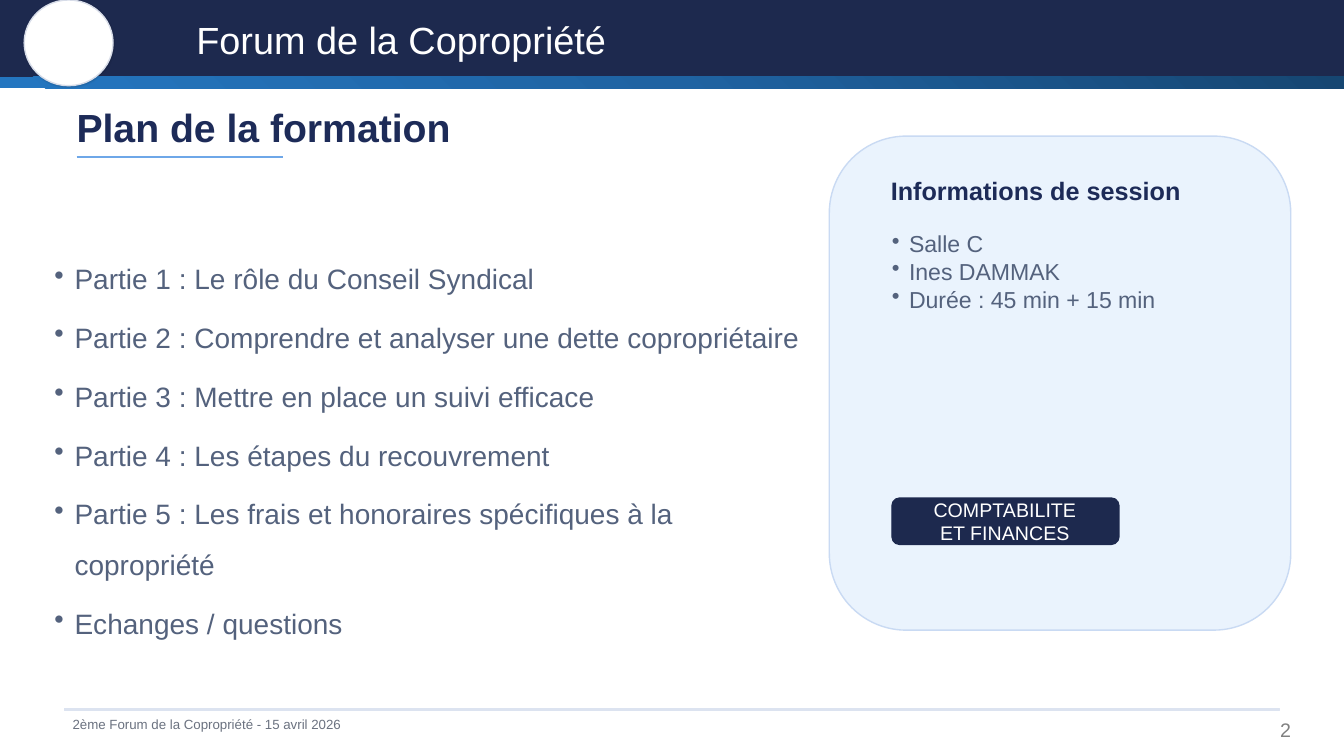
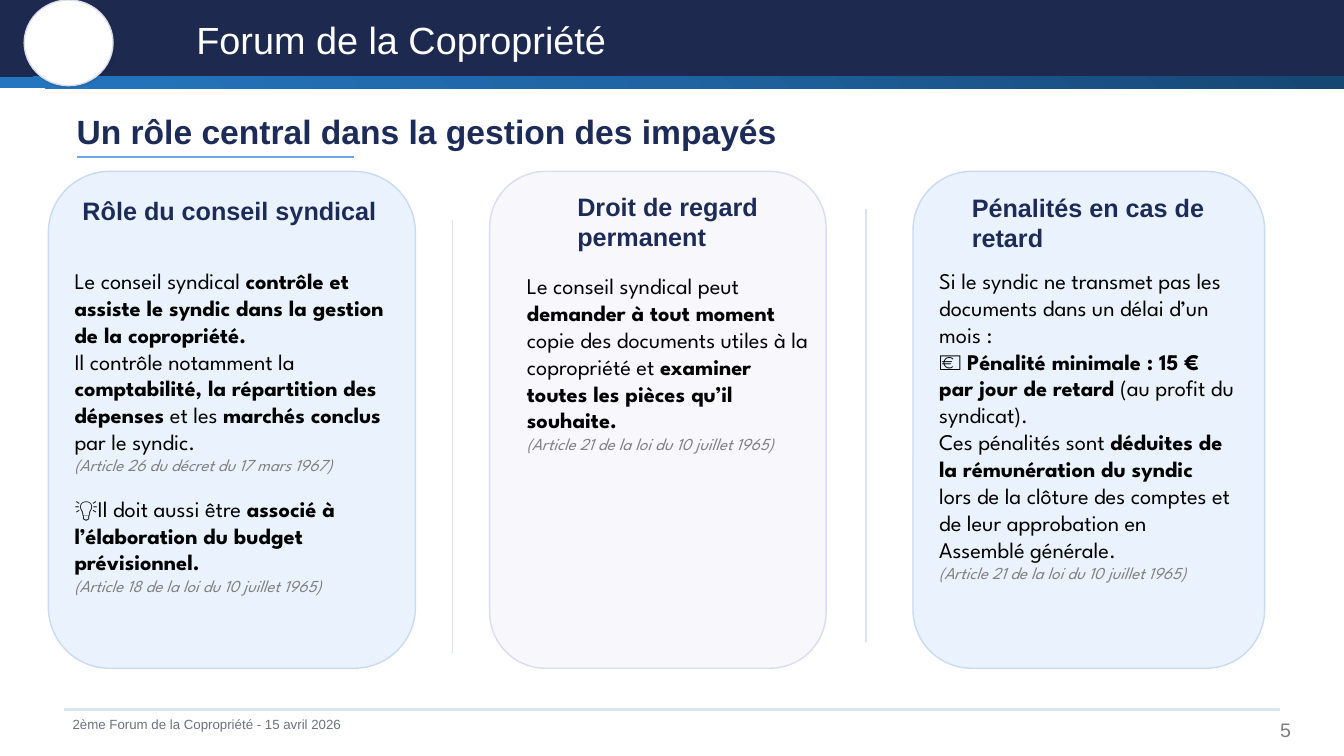
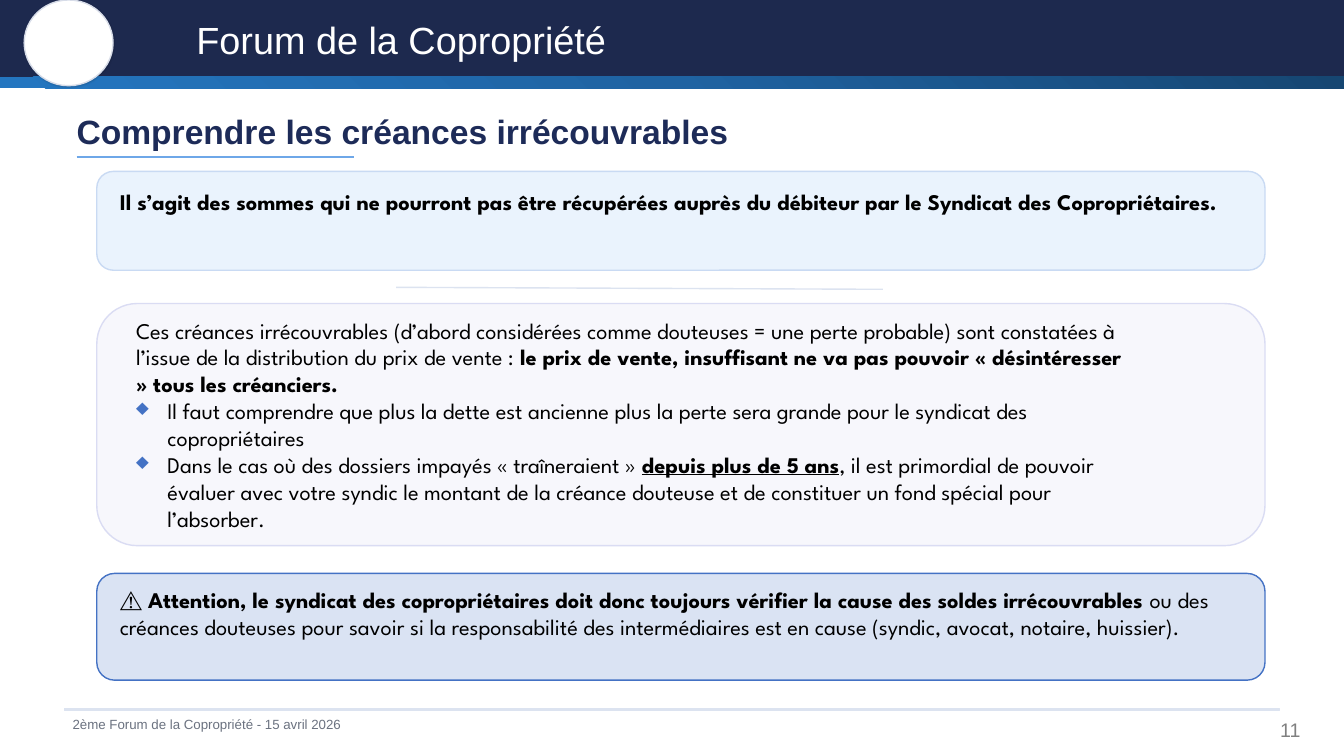
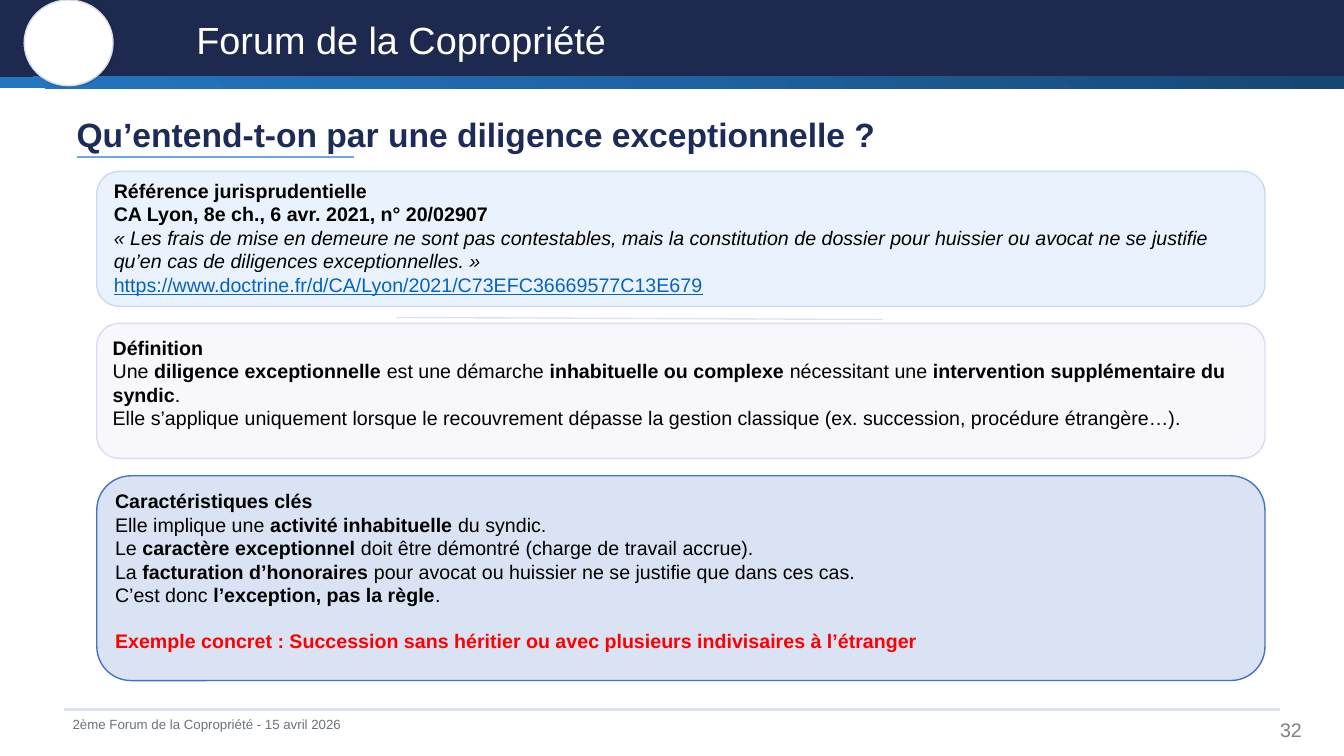
import pptx
import pptx.dml.color
import pptx.enum.shapes
import pptx.enum.text
import pptx.oxml
import pptx.oxml.ns
import pptx.util
from pptx.util import Cm

# Shared colours and styles
NAVY, INK, SLATE, GREY = "1D294E", "1D2B58", "54627D", "808080"
WHITE, PALE_RULE, ACCENT = "FFFFFF", "DCE3F0", "4472C4"
BLUE_PANEL = ("EAF3FD", "C9DAF3")
LILAC_PANEL = ("F7F7FC", "DADCF3")
STRONG_PANEL = ("DAE3F3", ACCENT)
NAVY_PANEL = (NAVY, NAVY)

PLAIN = dict(size=14, font="Arial", colour="000000", bold=False, italic=False,
             underlined=None, align=None, spacing=None, before=0,
             bullet=None, bullet_colour=None, indent=0)
HEADING = dict(anchor="MIDDLE", colour=INK, bold=True)
BODY = dict(size=16, font="League Spartan")
CITATION = dict(size=12, colour=GREY, italic=True)
DIAMOND = dict(bullet="♦", bullet_colour=ACCENT, indent=0.79)

SHAPES = pptx.enum.shapes.MSO_SHAPE
DRAWING_NS = pptx.oxml.ns.nsdecls("a")


def paint(target, colour):
    """Fill a shape, line or font with a solid hex colour."""
    target.solid()
    target.fore_color.rgb = pptx.dml.color.RGBColor.from_string(colour)


def write(slide, text, left, top, width, height=0.56, anchor="TOP", **style):
    """Add text; ** toggles bold, a (text, dict) paragraph overrides the style."""
    frame = slide.shapes.add_textbox(Cm(left), Cm(top), Cm(width), Cm(height)).text_frame
    frame.word_wrap = True
    frame.margin_left = frame.margin_right = frame.margin_top = frame.margin_bottom = 0
    frame.vertical_anchor = getattr(pptx.enum.text.MSO_ANCHOR, anchor)
    for index, entry in enumerate([text] if isinstance(text, str) else text):
        words, changes = (entry, {}) if isinstance(entry, str) else entry
        look = {**PLAIN, **style, **changes}
        paragraph = frame.add_paragraph() if index else frame.paragraphs[0]
        if look["align"]:
            paragraph.alignment = getattr(pptx.enum.text.PP_ALIGN, look["align"])
        if look["spacing"]:
            paragraph.line_spacing = look["spacing"]
        if index and look["before"]:
            paragraph.space_before = pptx.util.Pt(look["before"])
        if look["bullet"]:
            properties = paragraph._p.get_or_add_pPr()
            properties.set("marL", str(Cm(look["indent"])))
            properties.set("indent", str(-Cm(look["indent"])))
            if look["bullet_colour"]:
                properties.append(pptx.oxml.parse_xml(
                    f'<a:buClr {DRAWING_NS}><a:srgbClr val="{look["bullet_colour"]}"/></a:buClr>'))
            properties.append(pptx.oxml.parse_xml(
                f'<a:buChar {DRAWING_NS} char="{look["bullet"]}"/>'))
        for position, part in enumerate(words.split("**")):
            if not part:
                continue
            run = paragraph.add_run()
            run.text = part
            run.font.name = look["font"]
            run.font.size = pptx.util.Pt(look["size"])
            run.font.bold = look["bold"] or position % 2 == 1
            run.font.italic = look["italic"]
            run.font.underline = part == look["underlined"]
            paint(run.font.fill, look["colour"])


# Pages: panels are (left, top, width, height, style), dividers (x1, y1, x2, y2)
WIDE_LEFT, WIDE_WIDTH, PANEL_TOP = 2.44, 29.44, 4.32
pages = [
    dict(number="2", heading="Plan de la formation", size=28, top=2.92, rule_end=7.14,
         panels=[(20.9, 3.43, 11.63, 12.45, BLUE_PANEL),
                 (22.48, 12.55, 5.72, 1.17, NAVY_PANEL)],
         dividers=[]),
    dict(number="5", heading="Un rôle central dans la gestion des impayés",
         size=24, top=3.02, rule_end=8.92,
         panels=[(left, PANEL_TOP, width, 12.52, look) for left, width, look in
                 [(1.22, 9.25, BLUE_PANEL), (12.34, 8.48, LILAC_PANEL),
                  (23.01, 8.86, BLUE_PANEL)]],
         dividers=[(11.4, 5.54, 11.4, 16.46), (21.82, 5.26, 21.82, 16.18)]),
    dict(number="11", heading="Comprendre les créances irrécouvrables",
         size=24, top=3.02, rule_end=8.92,
         panels=[(WIDE_LEFT, top, WIDE_WIDTH, height, look) for top, height, look in
                 [(PANEL_TOP, 2.49, BLUE_PANEL), (7.65, 6.1, LILAC_PANEL),
                  (14.45, 2.69, STRONG_PANEL)]],
         dividers=[(22.25, 7.29, 9.98, 7.24)]),
    dict(number="32", heading="Qu’entend-t-on par une diligence exceptionnelle ?",
         size=24, top=3.11, rule_end=8.92,
         panels=[(WIDE_LEFT, top, WIDE_WIDTH, height, look) for top, height, look in
                 [(PANEL_TOP, 3.4, BLUE_PANEL), (8.15, 3.4, LILAC_PANEL),
                  (11.99, 5.16, STRONG_PANEL)]],
         dividers=[(22.25, 8.05, 9.98, 8.0)]),
]

deck = pptx.Presentation()
deck.slide_width, deck.slide_height = Cm(33.87), Cm(19.05)

# Bands, footer, heading, panels and dividers of every page
for page in pages:
    slide = deck.slides.add_slide(deck.slide_layouts[6])
    write(slide, page["number"], 32.26, 18.09, 1.6, colour=GREY)

    outlines = [
        (SHAPES.RECTANGLE, 0, 0, 33.87, 1.93, NAVY_PANEL),
        (SHAPES.RECTANGLE, 1.63, 17.86, 30.61, 0.05, (PALE_RULE, PALE_RULE)),
        (SHAPES.RECTANGLE, 0, 1.93, 33.87, 0.3, None),
        (SHAPES.OVAL, 0.61, 0, 2.24, 2.16, (WHITE, "D7DCE8")),
    ] + [(SHAPES.ROUNDED_RECTANGLE, *panel) for panel in page["panels"]]
    for kind, left, top, width, height, look in outlines:
        outline = slide.shapes.add_shape(kind, Cm(left), Cm(top), Cm(width), Cm(height))
        outline.shadow.inherit = False
        properties = outline._element.spPr
        if look:
            paint(outline.fill, look[0])
            paint(outline.line.fill, look[1])
            outline.line.width = pptx.util.Pt(1)
        else:
            # Gradient strip under the top band
            outline.line.fill.background()
            stops = "".join(
                f'<a:gs pos="{place}000"><a:srgbClr val="{colour}"/></a:gs>'
                for place, colour in [(0, "164672"), (50, "1F63A2"), (100, "2476C0")])
            properties.insert(2, pptx.oxml.parse_xml(
                f'<a:gradFill {DRAWING_NS} rotWithShape="1"><a:gsLst>{stops}</a:gsLst>'
                '<a:path path="circle"><a:fillToRect l="100000" b="100000"/></a:path>'
                '</a:gradFill>'))
        if kind == SHAPES.OVAL:
            # Faint shadow of the disc
            properties.find(pptx.oxml.ns.qn("a:effectLst")).append(pptx.oxml.parse_xml(
                f'<a:outerShdw {DRAWING_NS} blurRad="15240" dist="6350" dir="2700000">'
                '<a:srgbClr val="000000"><a:alpha val="15000"/></a:srgbClr></a:outerShdw>'))

    rules = [(1.93, 3.96, page["rule_end"], 3.96, "6EA7E8")]
    rules += [(*divider, PALE_RULE) for divider in page["dividers"]]
    for x1, y1, x2, y2, colour in rules:
        rule = slide.shapes.add_connector(
            pptx.enum.shapes.MSO_CONNECTOR.STRAIGHT, Cm(x1), Cm(y1), Cm(x2), Cm(y2))
        paint(rule.line.fill, colour)
        rule.line.width = pptx.util.Pt(1)
        rule._element.spPr.append(pptx.oxml.parse_xml(f"<a:effectLst {DRAWING_NS}/>"))

    write(slide, "2ème Forum de la Copropriété - 15 avril 2026", 1.83, 18.01, 12.19, 0.46,
          anchor="MIDDLE", size=9.5, colour="6B7280")
    write(slide, "Forum de la Copropriété", 4.95, 0.48, 14.99, 1.02,
          anchor="MIDDLE", size=27, colour=WHITE)
    write(slide, page["heading"], 1.93, page["top"], 24, size=page["size"], **HEADING)

plan, role, losses, diligence = deck.slides

# Plan of the session
write(plan, ["Partie 1 : Le rôle du Conseil Syndical",
             "Partie 2 : Comprendre et analyser une dette copropriétaire",
             "Partie 3 : Mettre en place un suivi efficace",
             "Partie 4 : Les étapes du recouvrement",
             "Partie 5 : Les frais et honoraires spécifiques à la copropriété",
             "Echanges / questions"],
      1.37, 6.17, 19.33, 7.11, size=20, colour=SLATE, spacing=1.5, before=6,
      bullet="•", indent=0.51)
write(plan, "Informations de session", 22.45, 4.52, 8.36, size=18, **HEADING)
write(plan, ["Salle C", "Ines DAMMAK", "Durée : 45 min + 15 min"],
      22.48, 5.79, 9.14, 6.6, size=16.5, colour=SLATE, bullet="•", indent=0.43)
write(plan, "COMPTABILITE ET FINANCES", 23.42, 12.95, 3.81, 0.36,
      anchor="MIDDLE", colour=WHITE, align="CENTER")

# Role of the council
for title, left, top, width in [("Rôle du conseil syndical", 2.08, 5.03, 7.85),
                                ("Droit de regard permanent", 14.55, 5.31, 6.45),
                                ("Pénalités en cas de retard", 24.49, 5.33, 5.87)]:
    write(role, title, left, top, width, size=18, **HEADING)
write(role, ["Le conseil syndical **contrôle et assiste le syndic dans la gestion "
             "de la copropriété.**",
             "Il contrôle notamment la **comptabilité, la répartition des dépenses** "
             "et les **marchés conclus** par le syndic.",
             ("(Article 26 du décret du 17 mars 1967)", CITATION),
             ("💡Il doit aussi être **associé à l’élaboration du budget prévisionnel.**",
              dict(before=14)),
             ("(Article 18 de la loi du 10 juillet 1965)", CITATION)],
      1.88, 6.73, 7.85, 5.59, **BODY)
write(role, ["Le conseil syndical peut **demander à tout moment** copie des documents "
             "utiles à la copropriété et **examiner toutes les pièces qu’il souhaite.**",
             ("(Article 21 de la loi du 10 juillet 1965)", CITATION)],
      13.28, 6.86, 7.24, 5.59, **BODY)
write(role, ["Si le syndic ne transmet pas les documents dans un délai d’un mois :",
             "💶 **Pénalité minimale : 15 € par jour de retard** (au profit du syndicat).",
             "Ces pénalités sont **déduites de la rémunération du syndic**",
             "lors de la clôture des comptes et de leur approbation en Assemblé générale.",
             ("(Article 21 de la loi du 10 juillet 1965)", CITATION)],
      23.67, 6.73, 7.52, 5.59, **BODY)

# Irrecoverable debts
write(losses, "**Il s’agit des sommes qui ne pourront pas être récupérées auprès du débiteur "
              "par le Syndicat des Copropriétaires.**", 3.02, 4.75, 28.4, 1.7, **BODY)
write(losses, ["Ces créances irrécouvrables (d’abord considérées comme douteuses = une perte "
               "probable) sont constatées à l’issue de la distribution du prix de vente :"
               "** le prix de vente, insuffisant ne va pas pouvoir « désintéresser » "
               "tous les créanciers.**",
               ("Il faut comprendre que plus la dette est ancienne plus la perte sera grande "
                "pour le syndicat des copropriétaires", DIAMOND),
               ("Dans le cas où des dossiers impayés « traîneraient » **depuis plus de 5 ans**"
                ", il est primordial de pouvoir évaluer avec votre syndic le montant de la "
                "créance douteuse et de constituer un fond spécial pour l’absorber.",
                dict(DIAMOND, underlined="depuis plus de 5 ans"))],
      3.43, 7.98, 25.27, 2.59, **BODY)
write(losses, "**⚠️ Attention, le syndicat des copropriétaires doit donc toujours vérifier "
              "la cause des soldes irrécouvrables **ou des créances douteuses pour savoir si "
              "la responsabilité des intermédiaires est en cause (syndic, avocat, notaire, "
              "huissier).", 3.02, 14.78, 28.09, 2.2, **BODY)

# Exceptional diligence
ruling_link = "https://www.doctrine.fr/d/CA/Lyon/2021/C73EFC36669577C13E679"
write(diligence, ["**Référence jurisprudentielle**",
                  "**CA Lyon, 8e ch., 6 avr. 2021, n° 20/02907**",
                  ("« Les frais de mise en demeure ne sont pas contestables, mais la "
                   "constitution de dossier pour huissier ou avocat ne se justifie qu’en cas "
                   "de diligences exceptionnelles. »", dict(italic=True)),
                  (ruling_link, dict(colour="0563C1", underlined=ruling_link))],
      2.87, 4.5, 28.4, 3.28)
write(diligence, ["**Définition**",
                  "Une **diligence exceptionnelle** est une démarche **inhabituelle ou "
                  "complexe** nécessitant une **intervention supplémentaire du syndic**.",
                  "Elle s’applique uniquement lorsque le recouvrement dépasse la gestion "
                  "classique (ex. succession, procédure étrangère…)."],
      2.84, 8.46, 28.14, 2.59)
write(diligence, ["**Caractéristiques clés**",
                  "Elle implique une **activité inhabituelle** du syndic.",
                  "Le **caractère exceptionnel** doit être démontré (charge de travail accrue).",
                  "La **facturation d’honoraires** pour avocat ou huissier ne se justifie "
                  "que dans ces cas.",
                  "C’est donc **l’exception, pas la règle**.",
                  ("Exemple concret : Succession sans héritier ou avec plusieurs indivisaires "
                   "à l’étranger", dict(colour="FF0000", bold=True, before=16))],
      2.9, 12.32, 28.09, 3.35)

deck.save("out.pptx")
